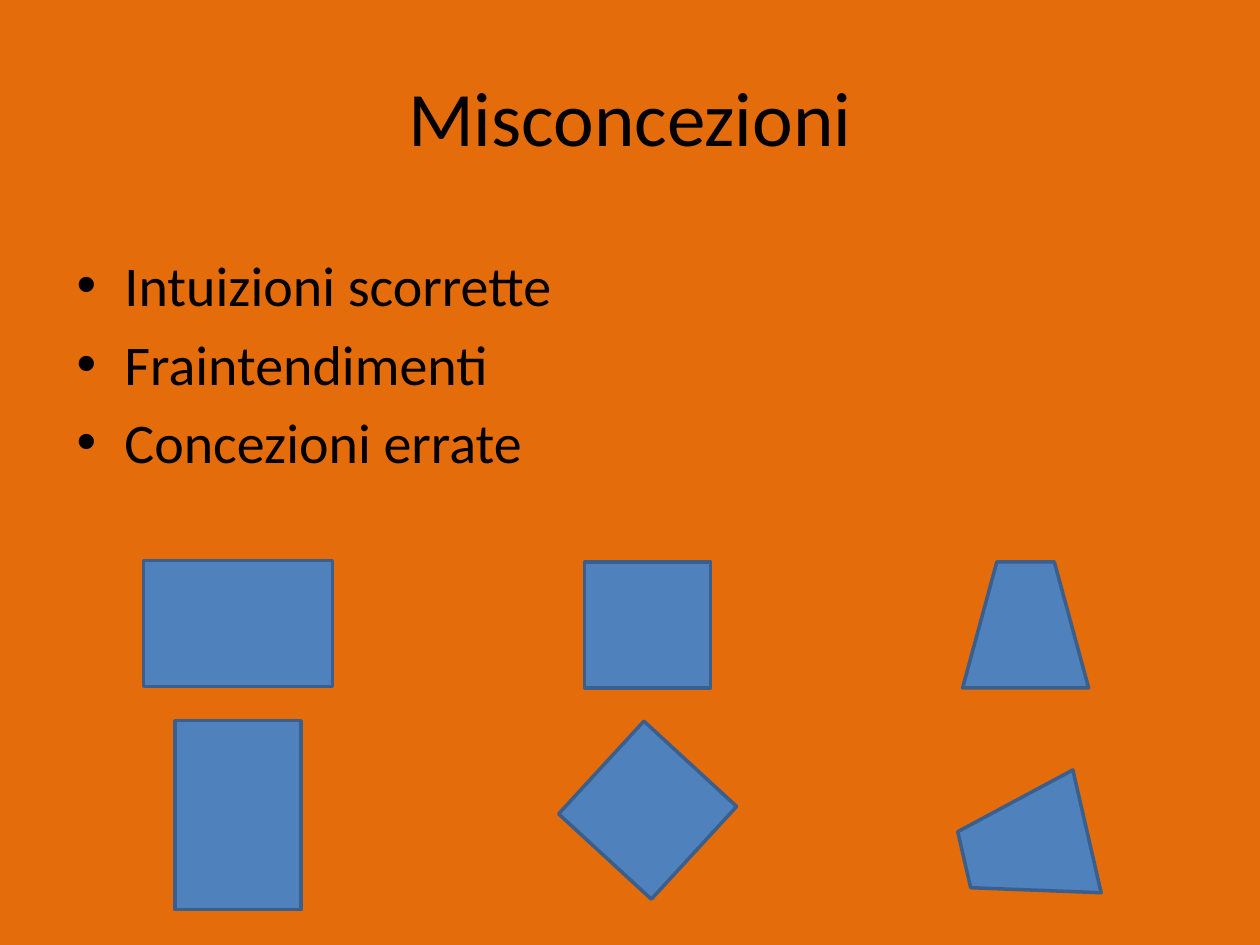
from dataclasses import dataclass

from lxml import etree
from pptx import Presentation
from pptx.dml.color import RGBColor
from pptx.enum.shapes import MSO_SHAPE
from pptx.enum.text import MSO_ANCHOR, PP_ALIGN
from pptx.oxml.ns import qn
from pptx.util import Inches, Pt

RECTANGLE = MSO_SHAPE.RECTANGLE
TRAPEZOID = MSO_SHAPE.TRAPEZOID
CENTER, LEFT = PP_ALIGN.CENTER, PP_ALIGN.LEFT
MIDDLE, TOP = MSO_ANCHOR.MIDDLE, MSO_ANCHOR.TOP


@dataclass(frozen=True)
class Theme:
    background: str = "E46C0A"
    text: str = "000000"
    fill: str = "4F81BD"
    line: str = "3A5F8C"
    font: str = "Calibri"
    title_size: int = 44
    body_size: int = 32
    line_width: int = 2
    indent: float = 0.38


THEME = Theme()
TITLE = "Misconcezioni"
POINTS = ["Intuizioni scorrette", "Fraintendimenti", "Concezioni errate"]

# Each column shows a figure upright, then the same figure turned:
# preset, width, height, column centre, then (row centre, angle) pairs
FIGURES = [
    (RECTANGLE, 1.5, 1, 1.89, [(4.95, 0), (6.47, 90)]),
    (RECTANGLE, 1, 1, 5.14, [(4.96, 0), (6.43, 42.6)]),
    (TRAPEZOID, 1, 1, 8.14, [(4.96, 0), (6.71, 257)]),
]
TRAPEZOID_INSET = 0.272


def apply_format(target, values):
    for name, value in values.items():
        setattr(target, name, value)


def place(box, left, top, width, height):
    apply_format(box, {
        "left": Inches(left), "top": Inches(top),
        "width": Inches(width), "height": Inches(height),
    })


def write_span(para, text, size):
    span = para.add_run()
    span.text = text
    apply_format(span.font, {"name": THEME.font, "size": Pt(size)})
    span.font.color.rgb = RGBColor.from_string(THEME.text)


def add_bullet(para):
    properties = para._p.get_or_add_pPr()
    indent = Inches(THEME.indent)
    properties.set("marL", str(indent))
    properties.set("indent", str(-indent))
    etree.SubElement(properties, qn("a:buFont")).set("typeface", "Arial")
    etree.SubElement(properties, qn("a:buChar")).set("char", "•")


def add_title(page):
    box = page.shapes.title
    place(box, 0.5, 0.29, 9, 1.25)
    apply_format(box.text_frame, {"vertical_anchor": MIDDLE, "word_wrap": True})
    para = box.text_frame.paragraphs[0]
    para.alignment = CENTER
    write_span(para, TITLE, THEME.title_size)


def add_points(page):
    box = page.shapes.add_textbox(0, 0, 0, 0)
    place(box, 0.51, 1.94, 9, 4.95)
    frame = box.text_frame
    apply_format(frame, {"vertical_anchor": TOP, "word_wrap": True})
    for index, text in enumerate(POINTS):
        para = frame.add_paragraph() if index else frame.paragraphs[0]
        apply_format(para, {
            "alignment": LEFT, "space_before": Pt(0.2 * THEME.body_size),
        })
        add_bullet(para)
        write_span(para, text, THEME.body_size)


def add_figure(page, preset, width, height, center_x, center_y, angle):
    figure = page.shapes.add_shape(preset, 0, 0, 0, 0)
    place(figure, center_x - width / 2, center_y - height / 2, width, height)
    figure.rotation = angle
    if preset == TRAPEZOID:
        figure.adjustments[0] = TRAPEZOID_INSET
    figure.shadow.inherit = False
    figure.fill.solid()
    figure.fill.fore_color.rgb = RGBColor.from_string(THEME.fill)
    figure.line.color.rgb = RGBColor.from_string(THEME.line)
    figure.line.width = Pt(THEME.line_width)


def main():
    deck = Presentation()
    apply_format(deck, {"slide_width": Inches(10), "slide_height": Inches(7.5)})
    page = deck.slides.add_slide(deck.slide_layouts.get_by_name("Title Only"))
    page.background.fill.solid()
    page.background.fill.fore_color.rgb = RGBColor.from_string(THEME.background)

    # Heading and list
    add_title(page)
    add_points(page)

    # Upright and turned quadrilaterals
    for preset, width, height, center_x, poses in FIGURES:
        for center_y, angle in poses:
            add_figure(page, preset, width, height, center_x, center_y, angle)

    deck.save("out.pptx")


if __name__ == "__main__":
    main()
